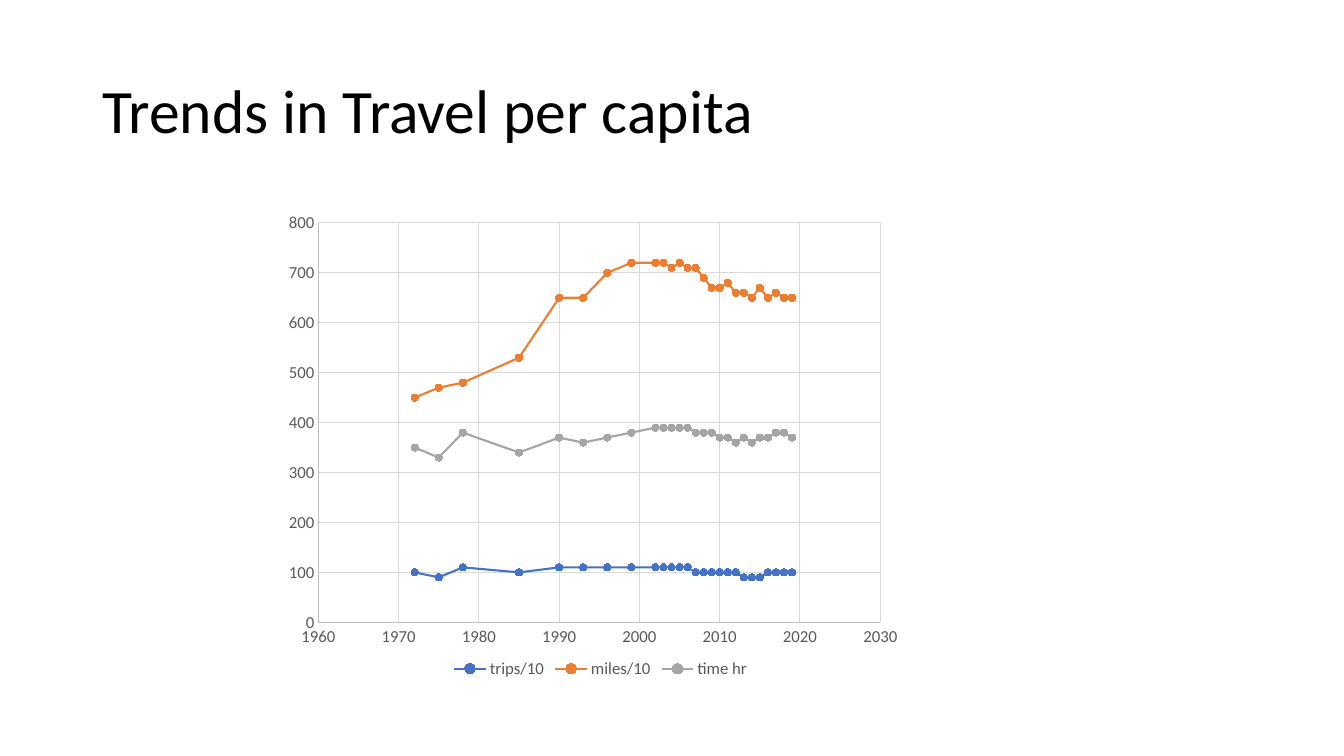
from dataclasses import dataclass

from lxml import etree
from pptx import Presentation
from pptx import util as u
from pptx.chart import data as chart_data
from pptx.dml.color import RGBColor
from pptx.enum import chart as ch
from pptx.enum import text

COLUMNS, ROWS = 160, 90
CELL = u.Inches(1 / 12)


@dataclass(frozen=True)
class Theme:
    font: str = "Calibri"
    title_size: float = 44
    label_size: float = 12
    axis_width: float = 0.75
    trend_width: float = 1.5
    marker_size: int = 5
    title: str = "000000"
    label: str = "595959"
    axis: str = "BFBFBF"
    grid: str = "D9D9D9"
    trips: str = "4472C4"
    miles: str = "ED7D31"
    time: str = "A5A5A5"


@dataclass(frozen=True)
class Area:
    """A block of grid cells."""
    column: float
    row: float
    columns: float
    rows: float

    def box(self) -> tuple:
        cells = (self.column, self.row, self.columns, self.rows)
        return tuple(u.Emu(round(n * CELL)) for n in cells)


@dataclass(frozen=True)
class Trend:
    name: str
    color: str
    values: tuple


@dataclass(frozen=True)
class Scale:
    low: int
    high: int
    step: int


THEME = Theme()
TITLE_AREA = Area(11, 4.8, 138, 17.4)
CHART_AREA = Area(34, 24.2, 75, 57.1)
PLOT_SHARES = {"x": 0.052, "y": 0.041, "w": 0.892, "h": 0.833}
YEAR_SCALE = Scale(1960, 2030, 10)
VALUE_SCALE = Scale(0, 800, 100)
SURVEY_YEARS = (1972, 1975, 1978, 1985, 1990, 1993, 1996, 1999, *range(2002, 2020))
TRENDS = (
    Trend("trips/10", THEME.trips, (
        100, 90, 110, 100, 110, 110, 110, 110, 110, 110, 110, 110, 110,
        100, 100, 100, 100, 100, 100, 90, 90, 90, 100, 100, 100, 100)),
    Trend("miles/10", THEME.miles, (
        450, 470, 480, 530, 650, 650, 700, 720, 720, 720, 710, 720, 710,
        710, 690, 670, 670, 680, 660, 660, 650, 670, 650, 660, 650, 650)),
    Trend("time hr", THEME.time, (
        350, 330, 380, 340, 370, 360, 370, 380, 390, 390, 390, 390, 390,
        380, 380, 380, 370, 370, 360, 370, 360, 370, 370, 380, 380, 370)),
)


def set_font(font, size: float, color: str) -> None:
    font.name = THEME.font
    font.size = u.Pt(size)
    font.color.rgb = RGBColor.from_string(color)


def set_line(line, color: str, width: float) -> None:
    line.color.rgb = RGBColor.from_string(color)
    line.width = u.Pt(width)


def add_title(slide, wording: str) -> None:
    frame = slide.shapes.add_textbox(*TITLE_AREA.box()).text_frame
    frame.word_wrap = True
    frame.vertical_anchor = text.MSO_ANCHOR.MIDDLE
    heading = frame.paragraphs[0]
    heading.text = wording
    heading.line_spacing = 0.9
    set_font(heading.font, THEME.title_size, THEME.title)


def style_axis(axis, scale: Scale) -> None:
    axis.minimum_scale, axis.maximum_scale = scale.low, scale.high
    axis.major_unit = scale.step
    axis.major_tick_mark = axis.minor_tick_mark = ch.XL_TICK_MARK.NONE
    axis.has_major_gridlines = True
    set_line(axis.major_gridlines.format.line, THEME.grid, THEME.axis_width)
    set_line(axis.format.line, THEME.axis, THEME.axis_width)
    set_font(axis.tick_labels.font, THEME.label_size, THEME.label)


def style_trend(series, color: str) -> None:
    series.smooth = False
    set_line(series.format.line, color, THEME.trend_width)
    marker = series.marker
    marker.style = ch.XL_MARKER_STYLE.CIRCLE
    marker.size = THEME.marker_size
    marker.format.fill.solid()
    marker.format.fill.fore_color.rgb = RGBColor.from_string(color)
    set_line(marker.format.line, color, THEME.axis_width)


def place_plot(chart) -> None:
    """Fix the inner plot area at its shares of the chart frame."""
    plot_area = chart.element.chart.plotArea
    namespace = etree.QName(plot_area).namespace

    def add(parent, tag: str, value=None):
        child = etree.SubElement(parent, f"{{{namespace}}}{tag}")
        if value is not None:
            child.set("val", str(value))
        return child

    for automatic in plot_area.findall(f"{{{namespace}}}layout"):
        plot_area.remove(automatic)
    layout = add(plot_area, "layout")
    plot_area.insert(0, layout)
    manual = add(layout, "manualLayout")
    add(manual, "layoutTarget", "inner")
    for side in "xy":
        add(manual, f"{side}Mode", "edge")
    for side, share in PLOT_SHARES.items():
        add(manual, side, share)


def add_trends_chart(slide) -> None:
    travel = chart_data.XyChartData()
    for trend in TRENDS:
        points = travel.add_series(trend.name)
        for year, value in zip(SURVEY_YEARS, trend.values):
            points.add_data_point(year, value)
    chart = slide.shapes.add_chart(
        ch.XL_CHART_TYPE.XY_SCATTER_LINES, *CHART_AREA.box(), travel).chart
    set_font(chart.font, THEME.label_size, THEME.title)
    chart.has_title = False
    chart.has_legend = True
    chart.legend.position = ch.XL_LEGEND_POSITION.BOTTOM
    chart.legend.include_in_layout = False
    set_font(chart.legend.font, THEME.label_size, THEME.label)
    style_axis(chart.category_axis, YEAR_SCALE)
    style_axis(chart.value_axis, VALUE_SCALE)
    plot = chart.plots[0]
    plot.vary_by_categories = False
    for series, trend in zip(plot.series, TRENDS):
        style_trend(series, trend.color)
    place_plot(chart)


def main() -> None:
    deck = Presentation()
    deck.slide_width, deck.slide_height = COLUMNS * CELL, ROWS * CELL
    slide = deck.slides.add_slide(deck.slide_layouts[6])
    add_title(slide, "Trends in Travel per capita")
    add_trends_chart(slide)
    deck.save("out.pptx")


if __name__ == "__main__":
    main()
